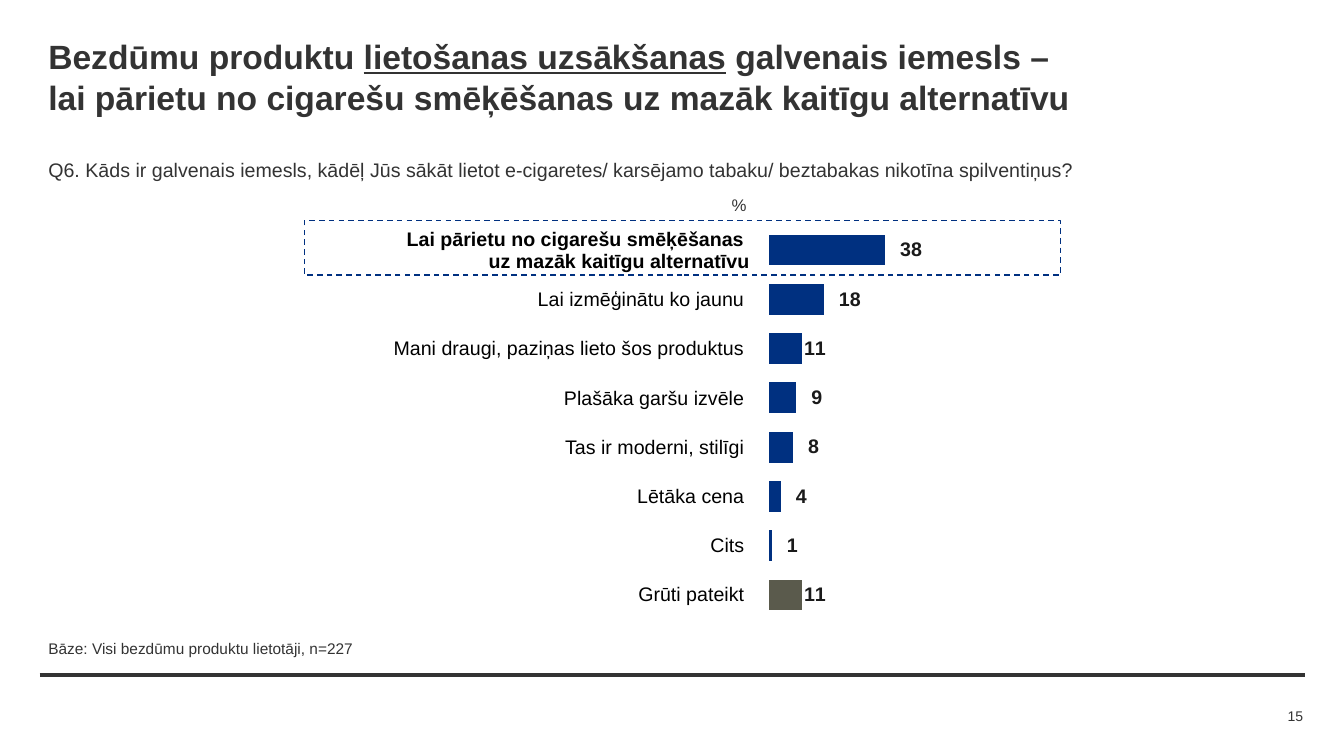
from lxml.etree import SubElement
from pptx import Presentation
from pptx.chart.data import CategoryChartData
from pptx.dml.color import RGBColor
from pptx.enum.chart import XL_CHART_TYPE as ChartType, XL_LABEL_POSITION as LabelPosition
from pptx.enum.dml import MSO_LINE_DASH_STYLE as Dash
from pptx.enum.shapes import MSO_CONNECTOR as Connector, MSO_SHAPE as Shape
from pptx.enum.text import MSO_ANCHOR as Anchor, PP_ALIGN as Align
from pptx.oxml import parse_xml
from pptx.oxml.ns import nsdecls, qn
from pptx.util import Pt

DARK = RGBColor(0x33, 0x33, 0x33)
BLACK = RGBColor(0, 0, 0)
LABEL = RGBColor(0x1A, 0x1A, 0x1A)
NAVY = RGBColor(0x00, 0x30, 0x80)
OLIVE = RGBColor(0x5A, 0x5A, 0x4C)
FONT = "Arial"
ACCOUNTING = r'_-* #\ ##0_-;\-* #\ ##0_-;_-* "-"??_-;_-'

REASONS = [
    ("Lai pārietu no cigarešu smēķēšanas \nuz mazāk kaitīgu alternatīvu", 38),
    ("Lai izmēģinātu ko jaunu ", 18),
    ("Mani draugi, paziņas lieto šos produktus ", 11),
    ("Plašāka garšu izvēle ", 9),
    ("Tas ir moderni, stilīgi ", 8),
    ("Lētāka cena ", 4),
    ("Cits ", 1),
    ("Grūti pateikt ", 11),
]
ROW_HEIGHT = 35.1
# Label shifts, as shares of the chart width
LABEL_SHIFTS = {2: -0.02, 7: -0.02}


def style(font, size, color=DARK, bold=False):
    font.name, font.size, font.bold = FONT, Pt(size), bold
    font.color.rgb = color


def add_text(text, left, top, width, height, size, anchor=Anchor.TOP, align=Align.LEFT):
    box = page.shapes.add_textbox(Pt(left), Pt(top), Pt(width), Pt(height))
    frame = box.text_frame
    frame.word_wrap = True
    frame.vertical_anchor = anchor
    frame.margin_left = frame.margin_right = frame.margin_top = frame.margin_bottom = 0
    para = frame.paragraphs[0]
    para.text = text
    para.alignment = align
    style(para.font, size)
    for span in para.runs:
        style(span.font, size)
    return para


deck = Presentation()
deck.slide_width, deck.slide_height = Pt(960), Pt(540)
page = deck.slides.add_slide(deck.slide_layouts[6])

# Footer rule
rule = page.shapes.add_connector(Connector.STRAIGHT, Pt(28.4), Pt(481.9), Pt(932), Pt(481.9))
rule.line.color.rgb = DARK
rule.line.width = Pt(3)
SubElement(rule.element.spPr, qn("a:effectLst"))

# Reason names
grid = page.shapes.add_table(len(REASONS), 1, Pt(236.7), Pt(161.3), Pt(299.5),
                             Pt(ROW_HEIGHT * len(REASONS))).table
grid.first_row = grid.horz_banding = False
for index, (reason, share) in enumerate(REASONS):
    grid.rows[index].height = Pt(ROW_HEIGHT)
    cell = grid.cell(index, 0)
    cell.fill.background()
    cell.vertical_anchor = Anchor.MIDDLE
    cell.margin_left = cell.margin_right = cell.margin_top = Pt(0.7)
    cell.margin_bottom = 0
    cell.text_frame.text = reason
    for para in cell.text_frame.paragraphs:
        para.alignment = Align.RIGHT
        style(para.runs[0].font, 14, BLACK, bold=index == 0)

# Title
title = add_text("", 34.5, 24.5, 897, 60, 24)
title.line_spacing = 1.03
for part, underlined in [("Bezdūmu produktu ", False), ("lietošanas uzsākšanas", True),
                         (" galvenais iemesls –", False), (None, False),
                         ("lai pārietu no cigarešu smēķēšanas uz mazāk kaitīgu alternatīvu", False)]:
    if part is None:
        title.add_line_break()
        continue
    span = title.add_run()
    span.text = part
    style(span.font, 24, bold=True)
    span.font.underline = underlined

# Question, base and unit
add_text("Q6. Kāds ir galvenais iemesls, kādēļ Jūs sākāt lietot e-cigaretes/ karsējamo tabaku/ "
         "beztabakas nikotīna spilventiņus?", 34.5, 112.5, 747, 26, 14)
add_text("Bāze: Visi bezdūmu produktu lietotāji, n=227", 34.5, 455.8, 495, 13.7, 11, Anchor.BOTTOM)
add_text("%", 522.7, 139, 26.6, 14.4, 12)

# Frame around the main reason
highlight = page.shapes.add_shape(Shape.RECTANGLE, Pt(217.4), Pt(157.7), Pt(540), Pt(38.9))
highlight.shadow.inherit = False
highlight.fill.background()
highlight.line.color.rgb = NAVY
highlight.line.width = Pt(1)
highlight.line.dash_style = Dash.DASH

# Bar chart
data = CategoryChartData()
data.categories = [str(number) for number in range(1, len(REASONS) + 1)]
data.add_series("Series 1", [share for reason, share in REASONS])
chart = page.shapes.add_chart(ChartType.BAR_CLUSTERED, Pt(409.7), Pt(79.2), Pt(469.4), Pt(385.9),
                              data).chart
chart.has_legend = chart.has_title = False
style(chart.font, 18)
chart.category_axis.reverse_order = True
chart.category_axis.visible = False
scale = chart.value_axis
scale.minimum_scale, scale.maximum_scale, scale.major_unit = 0, 100, 100
scale.has_major_gridlines = False
scale.visible = False

plot = chart.plots[0]
plot.gap_width, plot.overlap, plot.vary_by_categories = 60, -9, False
bars = plot.series[0]
bars.invert_if_negative = False
bars.format.fill.solid()
bars.format.fill.fore_color.rgb = NAVY
unsure = bars.points[len(REASONS) - 1].format.fill
unsure.solid()
unsure.fore_color.rgb = OLIVE

# Value labels
labels = bars.data_labels
labels.show_value = True
labels.position = LabelPosition.OUTSIDE_END
labels.number_format, labels.number_format_is_linked = ACCOUNTING, False
style(labels.font, 14, LABEL, bold=True)
for index, shift in LABEL_SHIFTS.items():
    label = bars.points[index].data_label
    style(label.font, 14, LABEL, bold=True)
    label.position = LabelPosition.OUTSIDE_END
for item in labels._element.findall(qn("c:dLbl")):
    mark = item.find(qn("c:idx"))
    shift = LABEL_SHIFTS[int(mark.get("val"))]
    number_format = parse_xml(f'<c:numFmt {nsdecls("c")} sourceLinked="0"/>')
    number_format.set("formatCode", ACCOUNTING)
    mark.addnext(number_format)
    mark.addnext(parse_xml(f'<c:layout {nsdecls("c")}><c:manualLayout><c:x val="{shift}"/>'
                           '<c:y val="0"/></c:manualLayout></c:layout>'))

# Plot position and clear chart background
area = chart._chartSpace.chart.plotArea
for layout in area.findall(qn("c:layout")):
    area.remove(layout)
layout = parse_xml(f'<c:layout {nsdecls("c")}><c:manualLayout/></c:layout>')
for tag, value in [("layoutTarget", "inner"), ("xMode", "edge"), ("yMode", "edge"),
                   ("x", "0.297"), ("y", "0.212"), ("w", "0.466"), ("h", "0.73")]:
    SubElement(layout[0], qn(f"c:{tag}")).set("val", value)
area.insert(0, layout)
chart._chartSpace.chart.addnext(parse_xml(
    f'<c:spPr {nsdecls("c", "a")}><a:noFill/><a:ln><a:noFill/></a:ln></c:spPr>'))

# Page number
add_text("15", 854.6, 503.3, 76.3, 15.8, 10, Anchor.MIDDLE, Align.RIGHT)

deck.save("out.pptx")
